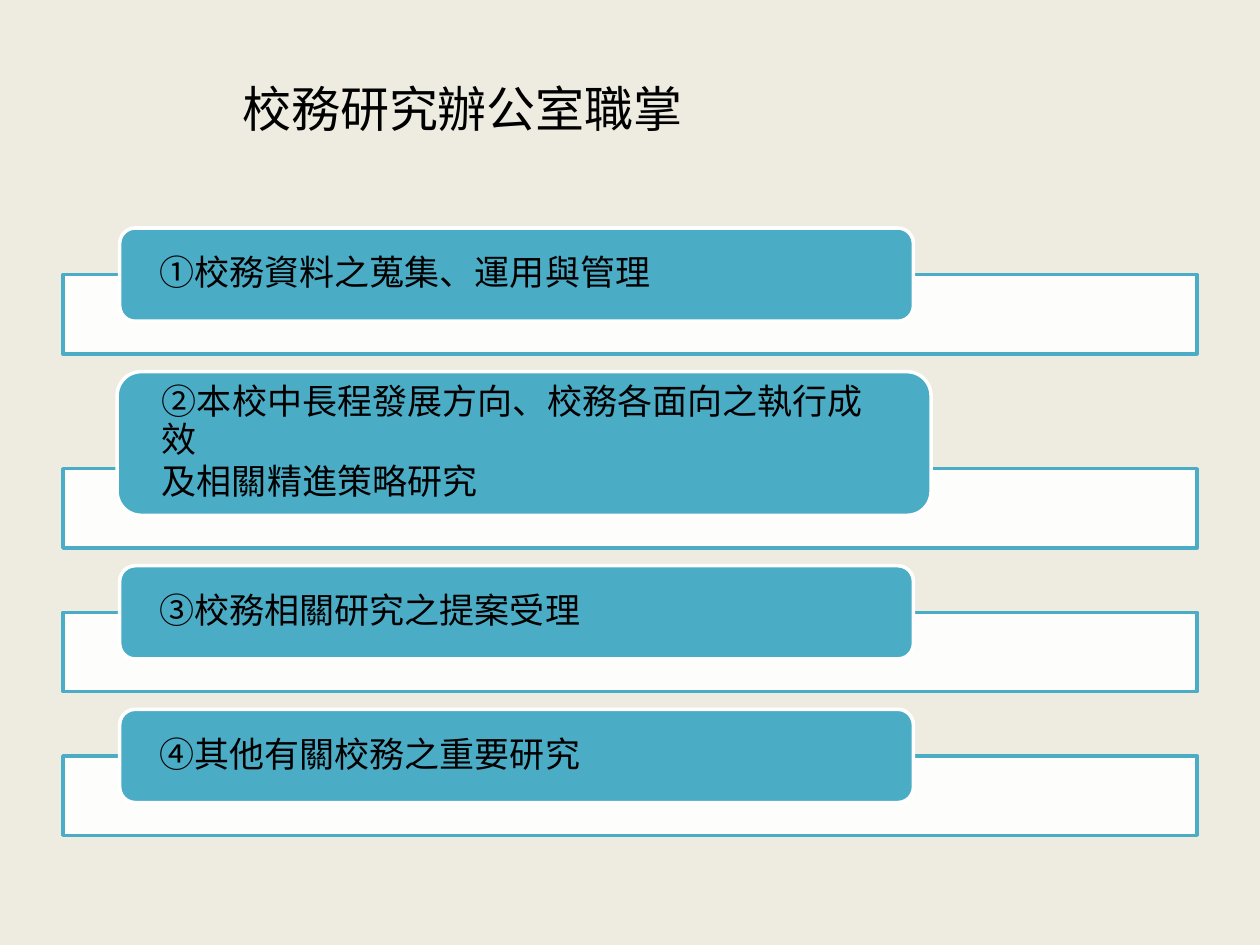
"""Build a slide listing the four duties of the institutional research office."""
from lxml import etree
from pptx import Presentation
from pptx.dml.color import RGBColor
from pptx.enum.shapes import MSO_SHAPE
from pptx.enum.text import MSO_ANCHOR, PP_ALIGN
from pptx.oxml.ns import qn
from pptx.util import Inches, Pt

RECTANGLE, ROUNDED = MSO_SHAPE.RECTANGLE, MSO_SHAPE.ROUNDED_RECTANGLE
MIDDLE = MSO_ANCHOR.MIDDLE
LEFT, CENTER = PP_ALIGN.LEFT, PP_ALIGN.CENTER
COLORS = {name: RGBColor.from_string(value) for name, value in {
    "background": "EEECE1", "teal": "4BACC6", "white": "FFFFFF", "text": "000000"}.items()}
TEXT_FONT, NUMBER_FONT = "Arial", "Noto Sans CJK TC"
DUTIES = [
    ("①", ["校務資料之蒐集、運用與管理"]),
    ("②", ["本校中長程發展方向、校務各面向之執行成效", "及相關精進策略研究"]),
    ("③", ["校務相關研究之提案受理"]),
    ("④", ["其他有關校務之重要研究"]),
]
BAR_HEIGHT, BAR_STEP, OVERLAP = 0.63, 1.14, 0.37
LABEL_HEIGHT, EXTRA_LINE = 0.74, 0.4


def add_box(page, kind, left, top, width, height, fill, line):
    box = page.shapes.add_shape(kind, Inches(left), Inches(top), Inches(width), Inches(height))
    box.shadow.inherit = False
    box.fill.solid()
    box.fill.fore_color.rgb = COLORS[fill]
    box.line.color.rgb = COLORS[line]
    box.line.width = Pt(2)
    return box


def add_span(para, text, font, size):
    span = para.add_run()
    span.text = text
    span.font.name = font
    span.font.size = Pt(size)
    span.font.color.rgb = COLORS["text"]


deck = Presentation()
deck.slide_width, deck.slide_height = Inches(10), Inches(7.5)
page = deck.slides.add_slide(deck.slide_layouts[5])
page.background.fill.solid()
page.background.fill.fore_color.rgb = COLORS["background"]

title = page.shapes.title
title.left, title.top = Inches(-0.83), Inches(0.23)
title.width, title.height = Inches(9), Inches(1.25)
title.text_frame.vertical_anchor = MIDDLE
title.text_frame.paragraphs[0].alignment = CENTER
add_span(title.text_frame.paragraphs[0], "校務研究辦公室職掌", TEXT_FONT, 28)

bar_top = 2.18
for index, (number, lines) in enumerate(DUTIES):
    extra = EXTRA_LINE * (len(lines) - 1)
    if index:
        bar_top += BAR_STEP + extra
    bar = add_box(page, RECTANGLE, 0.5, bar_top, 9, BAR_HEIGHT, "white", "teal")
    color = bar.fill._xPr.find(f"{qn('a:solidFill')}/{qn('a:srgbClr')}")
    etree.SubElement(color, qn("a:alpha"), val="90000")

    left, width = (0.93, 6.46) if extra else (0.95, 6.3)
    height = LABEL_HEIGHT + extra
    label = add_box(page, ROUNDED, left, bar_top + OVERLAP - height, width, height, "teal", "white")
    frame = label.text_frame
    frame.word_wrap = True
    frame.vertical_anchor = MIDDLE
    frame.margin_left, frame.margin_right = Inches(1.23 - left), Inches(0.24)
    frame.margin_top = frame.margin_bottom = 0
    for row, line in enumerate(lines):
        para = frame.add_paragraph() if row else frame.paragraphs[0]
        para.alignment = LEFT
        para.line_spacing = 0.9
        para.space_after = Pt(2.5)
        if row == 0:
            add_span(para, number, NUMBER_FONT, 20)
        add_span(para, line, TEXT_FONT, 20)

deck.save("out.pptx")
